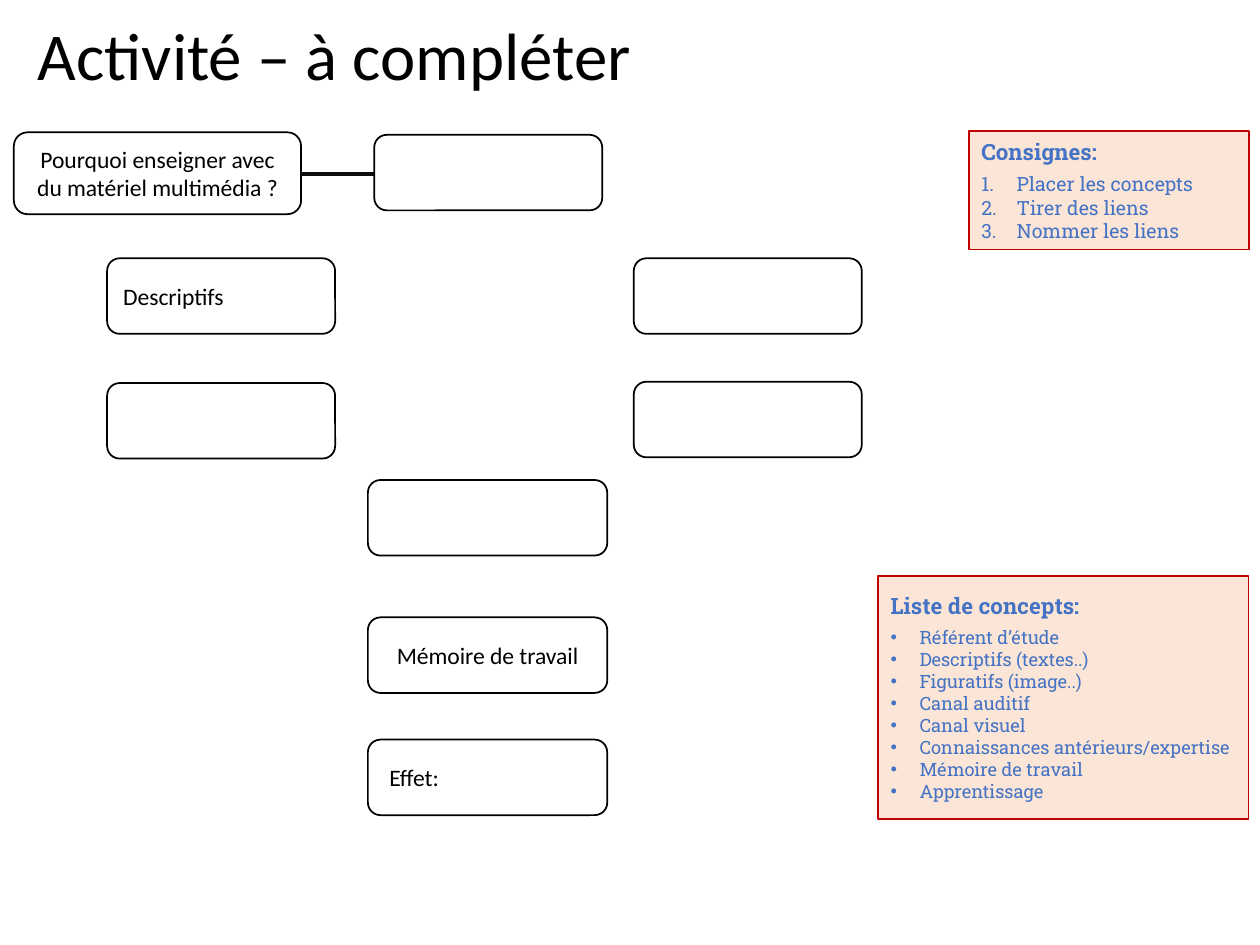
from dataclasses import dataclass

from lxml import etree
from pptx import Presentation
from pptx.dml.color import RGBColor
from pptx.enum.shapes import MSO_CONNECTOR, MSO_SHAPE
from pptx.enum.text import MSO_ANCHOR, MSO_AUTO_SIZE, PP_ALIGN
from pptx.oxml.ns import qn
from pptx.util import Inches, Pt

ROUNDED, RECT = MSO_SHAPE.ROUNDED_RECTANGLE, MSO_SHAPE.RECTANGLE
STRAIGHT = MSO_CONNECTOR.STRAIGHT
LEFT, CENTER = PP_ALIGN.LEFT, PP_ALIGN.CENTER
MIDDLE, BOTTOM = MSO_ANCHOR.MIDDLE, MSO_ANCHOR.BOTTOM

BLACK, WHITE = "000000", "FFFFFF"
PEACH, RED, BLUE = "FBE5D6", "C00000", "4472C4"
BODY, SLAB = "Calibri", "Roboto Slab"

NARROW, WIDE, NODE_H = 1.81, 1.9, 0.6
LEFT_X, RIGHT_X, WIDE_X = 0.85, 5.03, 2.92


@dataclass
class Node:
    x: float
    y: float
    w: float = NARROW
    h: float = NODE_H
    text: str = ""
    align: PP_ALIGN = CENTER


@dataclass
class Panel:
    x: float
    y: float
    w: float
    h: float
    heading: str
    items: list[str]
    size: float
    indent: float
    numbered: bool = False


NODES = [
    Node(0.11, 1.05, 2.28, 0.65, "Pourquoi enseigner avec du matériel multimédia ?"),
    Node(2.97, 1.07),
    Node(LEFT_X, 2.05, text="Descriptifs", align=LEFT),
    Node(RIGHT_X, 2.05),
    Node(LEFT_X, 3.04),
    Node(RIGHT_X, 3.03),
    Node(WIDE_X, 3.81, WIDE),
    Node(WIDE_X, 4.9, WIDE, text="Mémoire de travail"),
    Node(WIDE_X, 5.87, WIDE, text=" Effet:", align=LEFT),
]

PANELS = [
    Panel(7.69, 1.04, 2.22, 0.94, "Consignes:",
          ["Placer les concepts", "Tirer des liens", "Nommer les liens"],
          11.2, 0.28, numbered=True),
    Panel(6.97, 4.57, 2.94, 1.93, "Liste de concepts:",
          ["Référent d’étude", "Descriptifs (textes..)", "Figuratifs (image..)",
           "Canal auditif", "Canal visuel", "Connaissances antérieurs/expertise",
           "Mémoire de travail", "Apprentissage"],
          10.5, 0.23),
]


def rgb(color: str) -> RGBColor:
    return RGBColor.from_string(color)


def write(p, text: str, *, size=13.5, font=BODY, color=BLACK, bold=False, align=LEFT):
    p.alignment = align
    r = p.add_run()
    r.text = text
    r.font.size = Pt(size)
    r.font.name = font
    r.font.bold = bold
    r.font.color.rgb = rgb(color)


def add_box(s, kind: MSO_SHAPE, box: Node | Panel, fill: str, line: str):
    sp = s.shapes.add_shape(kind, Inches(box.x), Inches(box.y), Inches(box.w), Inches(box.h))
    sp.shadow.inherit = False
    sp.fill.solid()
    sp.fill.fore_color.rgb = rgb(fill)
    sp.line.color.rgb = rgb(line)
    sp.line.width = Pt(1)
    tf = sp.text_frame
    tf.word_wrap = True
    tf.vertical_anchor = MIDDLE
    return tf


def add_node(s, node: Node):
    tf = add_box(s, ROUNDED, node, WHITE, BLACK)
    if node.text:
        write(tf.paragraphs[0], node.text, align=node.align)


def add_bullet(p, indent: float, numbered: bool):
    pPr = p._p.get_or_add_pPr()
    pPr.set("marL", str(Inches(indent)))
    pPr.set("indent", str(-Inches(indent)))
    if numbered:
        etree.SubElement(pPr, qn("a:buFont"), typeface="+mj-lt")
        etree.SubElement(pPr, qn("a:buAutoNum"), type="arabicPeriod")
    else:
        etree.SubElement(pPr, qn("a:buFont"), typeface="Arial")
        etree.SubElement(pPr, qn("a:buChar"), char="•")


def add_panel(s, panel: Panel):
    tf = add_box(s, RECT, panel, PEACH, RED)
    p = tf.paragraphs[0]
    p.space_after = Pt(4)
    write(p, panel.heading, size=12.8, font=SLAB, color=BLUE, bold=True)
    for item in panel.items:
        p = tf.add_paragraph()
        write(p, item, size=panel.size, font=SLAB, color=BLUE)
        add_bullet(p, panel.indent, panel.numbered)


def add_link(s, x1: float, x2: float, y: float):
    line = s.shapes.add_connector(STRAIGHT, Inches(x1), Inches(y), Inches(x2), Inches(y))
    line.line.color.rgb = rgb("0D0D0D")
    line.line.width = Pt(2.25)
    etree.SubElement(line._element.spPr, qn("a:effectLst"))


def set_title(s, text: str):
    sp = s.shapes.title
    sp.left, sp.top, sp.width, sp.height = Inches(0.2), Inches(0.19), Inches(9), Inches(0.59)
    tf = sp.text_frame
    tf.word_wrap = True
    tf.auto_size = MSO_AUTO_SIZE.NONE
    tf.vertical_anchor = BOTTOM
    p = tf.paragraphs[0]
    p.line_spacing = 0.7
    write(p, text, size=38.2)


def main():
    prs = Presentation()
    prs.slide_width, prs.slide_height = Inches(10), Inches(7.5)
    s = prs.slides.add_slide(prs.slide_layouts[5])
    set_title(s, "Activité – à compléter")
    for panel in PANELS:
        add_panel(s, panel)
    for node in NODES:
        add_node(s, node)
    question, answer = NODES[:2]
    add_link(s, question.x + question.w, answer.x, 1.38)
    prs.save("out.pptx")


if __name__ == "__main__":
    main()
